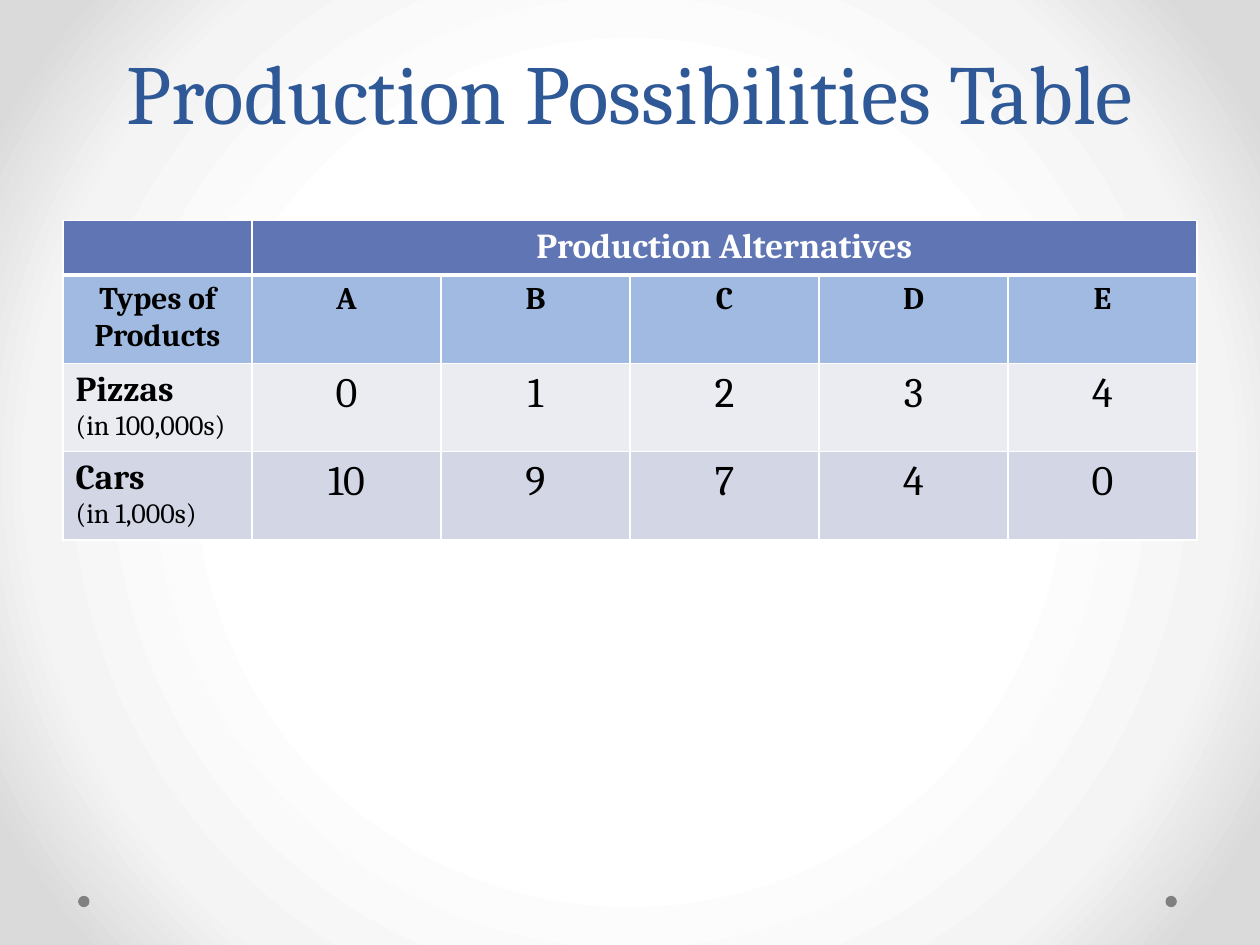
from pptx import Presentation, oxml
from pptx import util as u
from pptx.dml.color import RGBColor
from pptx.enum import shapes, text
from pptx.oxml import ns

FONT = "Cambria"
CENTER, LEFT = text.PP_ALIGN.CENTER, text.PP_ALIGN.LEFT
HEADER = {"size": 20, "bold": True, "color": "FFFFFF"}
COLUMN = {"size": 18, "bold": True, "color": "000000"}
PRODUCT = {"size": 20, "bold": True, "color": "000000"}
UNIT = {"size": 16, "bold": False, "color": "000000"}
NUMBER = {"size": 24, "bold": False, "color": "000000"}
ROW_FILLS = ["6076B4", "A0BAE1", "EAECF2", "D2D6E5"]
PRODUCTS = [
    ("Pizzas", "(in 100,000s)", [0, 1, 2, 3, 4]),
    ("Cars", "(in 1,000s)", [10, 9, 7, 4, 0]),
]


def paint(fill, color):
    """Give a fill one solid colour."""
    fill.solid()
    fill.fore_color.rgb = RGBColor.from_string(color)


def add_run(paragraph, words, style):
    """Add one styled run to a paragraph."""
    run = paragraph.add_run()
    run.text = words
    settings = {"name": FONT, "size": u.Pt(style["size"]), "bold": style["bold"]}
    for name, value in settings.items():
        setattr(run.font, name, value)
    run.font.color.rgb = RGBColor.from_string(style["color"])


def add_background(slide):
    """Fill the slide with a radial gradient, white in the middle."""
    stops = "".join(
        f'<a:gs pos="{position * 1000}"><a:srgbClr val="{color}"/></a:gs>'
        for position, color in [(50, "FFFFFF"), (76, "F4F4F4"), (92, "DADADA")]
    )
    gradient = oxml.parse_xml(
        f'<a:gradFill {ns.nsdecls("a")} rotWithShape="1"><a:gsLst>{stops}</a:gsLst>'
        '<a:path path="circle"><a:fillToRect l="50000" t="50000" r="50000" b="50000"/>'
        "</a:path></a:gradFill>"
    )
    slide.background.fill.solid()
    solid = slide.element.find(".//" + ns.qn("a:solidFill"))
    solid.getparent().replace(solid, gradient)


def add_dots(slide, lefts, top, size):
    """Place the grey footer dots in a row."""
    for left in lefts:
        dot = slide.shapes.add_shape(
            shapes.MSO_SHAPE.OVAL, *map(u.Inches, (left, top, size, size))
        )
        dot.shadow.inherit = False
        paint(dot.fill, "808080")
        dot.line.fill.background()


def add_title(slide, left, top, width, height):
    """Write the centred slide title at the bottom of its box."""
    box = slide.shapes.add_textbox(*map(u.Inches, (left, top, width, height)))
    frame = box.text_frame
    frame.word_wrap = True
    frame.vertical_anchor = text.MSO_ANCHOR.BOTTOM
    paragraph = frame.paragraphs[0]
    paragraph.alignment = CENTER
    paragraph.line_spacing = u.Pt(58)
    style = {"size": 48, "bold": False, "color": "2F5897"}
    add_run(paragraph, "Production Possibilities Table", style)


def format_cell(cell, color, top, bottom):
    """Give a cell white borders of the given widths and a fill."""
    properties = cell._tc.get_or_add_tcPr()
    for side, points in {"L": 1, "R": 1, "T": top, "B": bottom}.items():
        properties.append(oxml.parse_xml(
            f'<a:ln{side} {ns.nsdecls("a")} w="{u.Pt(points)}"><a:solidFill>'
            f'<a:srgbClr val="FFFFFF"/></a:solidFill></a:ln{side}>'
        ))
    paint(cell.fill, color)


def write_cell(cell, lines, alignment=CENTER):
    """Write each (words, style) pair as a paragraph of the cell."""
    frame = cell.text_frame
    for index, (words, style) in enumerate(lines):
        paragraph = frame.add_paragraph() if index else frame.paragraphs[0]
        paragraph.alignment = alignment
        add_run(paragraph, words, style)


def add_production_table(slide, left, top, width, height):
    """Build the table of production alternatives."""
    rows, columns = len(ROW_FILLS), 6
    frame = slide.shapes.add_table(
        rows, columns, *map(u.Inches, (left, top, width, height))
    )
    table = frame.table
    for row, color in enumerate(ROW_FILLS):
        table.rows[row].height = u.Inches(height / rows)
        for column in range(columns):
            format_cell(
                table.cell(row, column), color,
                top=3 if row == 1 else 1, bottom=3 if row == 0 else 1,
            )
    table.cell(0, 1).merge(table.cell(0, columns - 1))
    write_cell(table.cell(0, 1), [("Production Alternatives", HEADER)])
    for column, label in enumerate(["Types of Products", *"ABCDE"]):
        write_cell(table.cell(1, column), [(label, COLUMN)])
    for row, (product, unit, amounts) in enumerate(PRODUCTS, start=2):
        write_cell(table.cell(row, 0), [(product, PRODUCT), (unit, UNIT)], LEFT)
        for column, amount in enumerate(amounts, start=1):
            write_cell(table.cell(row, column), [(str(amount), NUMBER)])


def main():
    """Build and save the presentation."""
    presentation = Presentation()
    presentation.slide_width = u.Inches(10)
    presentation.slide_height = u.Inches(7.5)
    slide = presentation.slides.add_slide(presentation.slide_layouts[6])
    add_background(slide)
    add_dots(slide, lefts=(9.25, 0.62), top=7.11, size=0.09)
    add_title(slide, 0.5, 0, 9, 1.17)
    add_production_table(slide, 0.5, 1.75, 9, 1.64)
    presentation.save("out.pptx")


if __name__ == "__main__":
    main()
